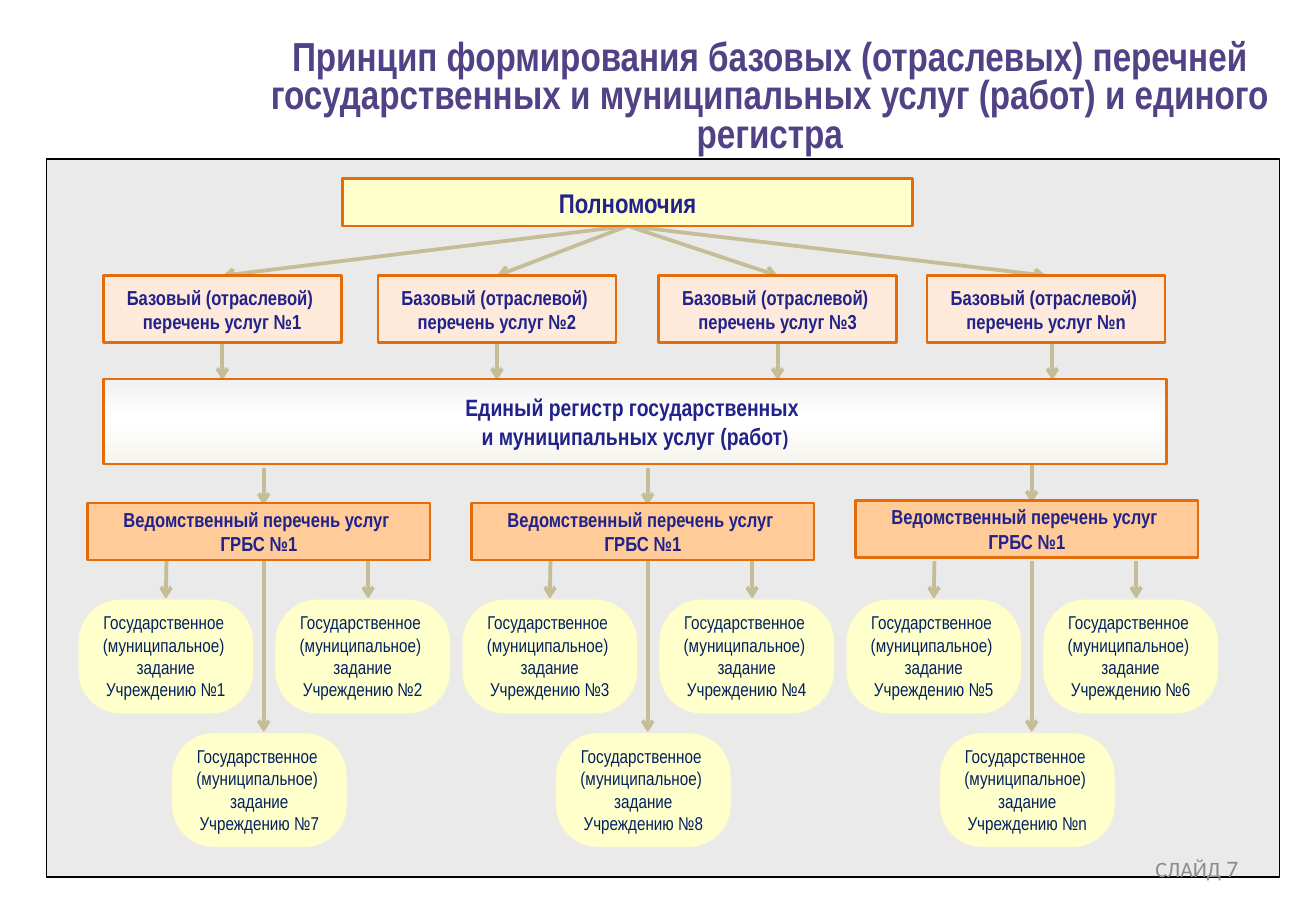
from copy import deepcopy
from dataclasses import dataclass
from typing import Optional

from lxml import etree
from pptx import Presentation
from pptx import util as u
from pptx.dml import color
from pptx.enum import shapes, text
from pptx.oxml import ns

HUES = {
    "panel": "EAEAEA", "black": "000000", "gray": "8C8C8C", "title": "514185",
    "navy": "22228B", "deep": "002060", "cream": "FFFFCC", "peach": "FDEADA",
    "sand": "FFCC99", "rust": "E46C0A", "pale": "EEECE1", "tan": "C4BD97",
}
FADE = [(0, "F8F7F3"), (0, "F2F2F2"), (0.5, "FFFFFF"), (1, "F5F4ED")]
RECT = shapes.MSO_SHAPE.RECTANGLE
ROUND = shapes.MSO_SHAPE.ROUNDED_RECTANGLE
MID, TOP = text.MSO_ANCHOR.MIDDLE, text.MSO_ANCHOR.TOP
CENTER, RIGHT = text.PP_ALIGN.CENTER, text.PP_ALIGN.RIGHT


@dataclass
class Font:
    size: float
    hue: str
    bold: bool = True
    name: str = "Arial Narrow"


@dataclass
class Look:
    form: int
    fill: Optional[str]
    edge: str
    width: float
    font: Optional[Font] = None
    pad: tuple = (0.1, 0.05)
    hold: int = MID


@dataclass
class Block:
    x: float
    y: float
    w: float
    h: float
    lines: tuple = ()
    tail: tuple = ()  # closing run: text and its size


PANEL = Look(RECT, "panel", "black", 0.75)
POWER = Look(RECT, "cream", "rust", 1.5, Font(16, "navy"))
BASE = Look(RECT, "peach", "rust", 1.5, Font(12, "navy"))
STOCK = Look(RECT, None, "rust", 1.5, Font(14, "navy"))
DEPT = Look(RECT, "sand", "rust", 1.5, Font(12, "navy"))
TASK = Look(ROUND, "cream", "pale", 1, Font(11, "deep", False), (0, 0), TOP)


def paint(key: str) -> color.RGBColor:
    return color.RGBColor.from_string(HUES[key])


def add_run(para, words: str, font: Font, size: float):
    run = para.add_run()
    run.text = words
    style = {"size": u.Pt(size), "bold": font.bold, "name": font.name}
    for key, value in style.items():
        setattr(run.font, key, value)
    run.font.color.rgb = paint(font.hue)
    return run


def write(shape, block: Block, font: Font, pad=(0.1, 0.05), hold=MID,
          wrap=False, align=CENTER, gap=1.0) -> None:
    frame = shape.text_frame
    side, edge = map(u.Inches, pad)
    style = {"word_wrap": wrap, "vertical_anchor": hold,
             "margin_left": side, "margin_right": side,
             "margin_top": edge, "margin_bottom": edge}
    for key, value in style.items():
        setattr(frame, key, value)
    para = frame.paragraphs[0]
    para.alignment, para.line_spacing = align, gap
    for i, line in enumerate(block.lines):
        if i:
            # The break takes the size of the run before it
            para.add_line_break()
            para._p[-1].append(deepcopy(run._r.rPr))
        run = add_run(para, line, font, font.size)
    if block.tail:
        add_run(para, block.tail[0], font, block.tail[1])


def draw(slide, block: Block, look: Look):
    place = map(u.Inches, (block.x, block.y, block.w, block.h))
    shape = slide.shapes.add_shape(look.form, *place)
    shape.shadow.inherit = False
    if look.form == ROUND:
        shape.adjustments[0] = 0.37
    if look.fill:
        shape.fill.solid()
        shape.fill.fore_color.rgb = paint(look.fill)
    else:
        shade(shape)
    shape.line.color.rgb = paint(look.edge)
    shape.line.width = u.Pt(look.width)
    if look.font:
        write(shape, block, look.font, look.pad, look.hold)
    return shape


def shade(shape) -> None:
    shape.fill.gradient()
    shape.fill.gradient_angle = 270
    stops = shape.element.spPr.find(".//" + ns.qn("a:gsLst"))
    for _ in FADE[2:]:
        stops.append(deepcopy(stops[0]))
    for stop, (spot, hue) in zip(shape.fill.gradient_stops, FADE):
        stop.position = spot
        stop.color.rgb = color.RGBColor.from_string(hue)


def label(slide, block: Block, font: Font, **style) -> None:
    place = map(u.Inches, (block.x, block.y, block.w, block.h))
    write(slide.shapes.add_textbox(*place), block, font, wrap=True, **style)


def arrow(slide, panel, x1: float, y1: float, x2: float, y2: float,
          start=None, end=None) -> None:
    ends = map(u.Inches, (x1, y1, x2, y2))
    line = slide.shapes.add_connector(shapes.MSO_CONNECTOR.STRAIGHT, *ends)
    line.line.color.rgb = paint("tan")
    line.line.width = u.Pt(2.25)
    props = line.element.spPr
    etree.SubElement(props.find(ns.qn("a:ln")), ns.qn("a:tailEnd"), type="arrow")
    etree.SubElement(props, ns.qn("a:effectLst"))
    if start is not None:
        line.begin_connect(start, 2)
    if end is not None:
        line.end_connect(end, 0)
    # Arrows lie behind the boxes, just above the panel
    panel.element.addnext(line.element)


def main() -> None:
    deck = Presentation()
    deck.slide_width, deck.slide_height = u.Inches(10.83), u.Inches(7.5)
    slide = deck.slides.add_slide(deck.slide_layouts[6])

    # Panel, slide number and title
    panel = draw(slide, Block(0.38, 1.31, 10.15, 5.91), PANEL)
    label(slide, Block(7.76, 6.95, 2.53, 0.4, ("СЛАЙД",), (" 7", 14)),
          Font(13, "gray", False, "Calibri"), align=RIGHT)
    label(slide, Block(1.84, 0.23, 8.99, 1.16, (
        "Принцип формирования базовых (отраслевых) перечней государственных "
        "и муниципальных услуг (работ) и единого регистра",)),
        Font(24, "title"), gap=0.8)

    # Powers, base lists and the single register
    power = draw(slide, Block(2.82, 1.47, 4.69, 0.39, ("Полномочия",)), POWER)
    for x, mark, drop in zip((0.85, 3.11, 5.42, 7.63), "123n",
                             (1.83, 4.09, 6.4, 8.66)):
        base = draw(slide, Block(x, 2.27, 1.96, 0.55, (
            "Базовый (отраслевой) ", f"перечень услуг №{mark}")), BASE)
        mid = x + 0.98
        arrow(slide, panel, 5.16, 1.86, mid, 2.27, power, base)
        joined = base if abs(drop - mid) < 0.02 else None
        arrow(slide, panel, drop, 2.82, drop, 3.13, joined)
    draw(slide, Block(0.85, 3.12, 8.75, 0.7, (
        "Единый регистр государственных ", "и муниципальных услуг (работ"),
        (")", 12)), STOCK)

    # Three departments, each with three tasks
    for i, (marks, top) in enumerate((("127", 4.14), ("348", 4.14), ("56n", 4.12))):
        x = 0.72 + 3.16 * i
        draw(slide, Block(x, top, 2.82, 0.47, (
            "Ведомственный перечень услуг ", "ГРБС №1")), DEPT)
        arrow(slide, panel, x + 1.45, top - 0.29, x + 1.45, top + 0.02)
        for mark, left, y, drop in zip(marks, (-0.08, 1.54, 0.69),
                                       (4.93, 4.93, 6.03), (0.65, 2.31, 1.45)):
            task = draw(slide, Block(x + left, y, 1.45, 0.95, (
                "Государственное ", "(муниципальное) ", "задание",
                f"Учреждению №{mark}")), TASK)
            joined = task if abs(drop - left - 0.725) < 0.02 else None
            arrow(slide, panel, x + drop, 4.62, x + drop, y, end=joined)

    deck.save("out.pptx")


if __name__ == "__main__":
    main()
